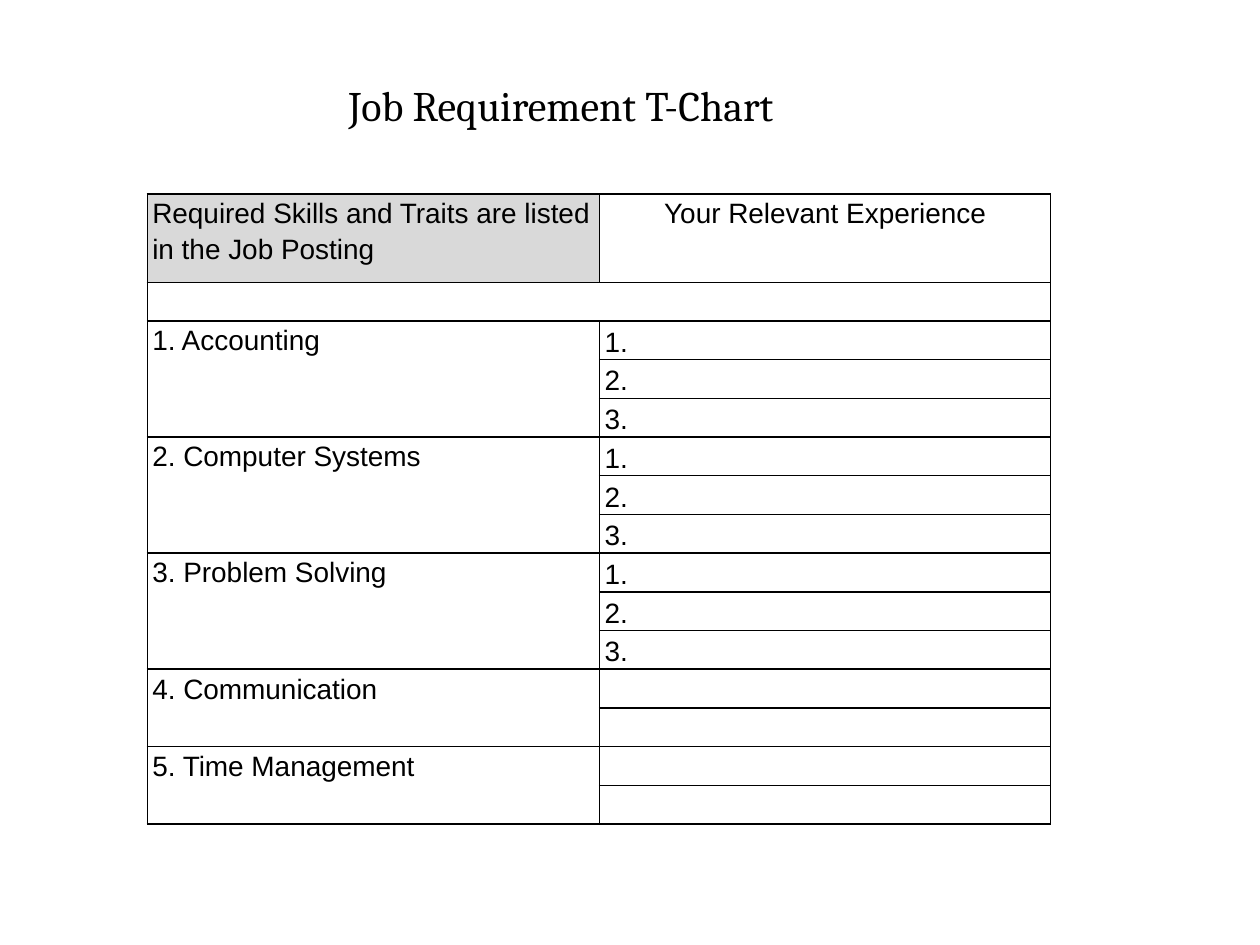
from lxml import etree
from pptx import Presentation
from pptx.dml.color import RGBColor
from pptx.enum.text import MSO_ANCHOR, MSO_AUTO_SIZE, PP_ALIGN
from pptx.oxml.ns import qn
from pptx.util import Cm, Pt

LEFT, CENTER = PP_ALIGN.LEFT, PP_ALIGN.CENTER
TOP, MIDDLE = MSO_ANCHOR.TOP, MSO_ANCHOR.MIDDLE
FIT_SHAPE = MSO_AUTO_SIZE.SHAPE_TO_FIT_TEXT

BLACK = RGBColor(0x00, 0x00, 0x00)
GRAY = RGBColor(0xD9, 0xD9, 0xD9)

COLUMN_WIDTHS = (9.12, 9.09)
HEADER_HEIGHT, ROW_HEIGHT = 1.78, 0.78

# Each skill with the labels of its experience rows
SKILLS = (
    ("1. Accounting", ("1.", "2.", "3.")),
    ("2. Computer Systems", ("1.", "2.", "3.")),
    ("3. Problem Solving", ("1.", "2.", "3.")),
    ("4. Communication", ("", "")),
    ("5. Time Management", ("", "")),
)


class ChartSlide:
    """The current slide and its text and table style."""

    title_font, title_size = "Cambria", Pt(24)
    body_font, body_size = "Arial", Pt(16)
    line_spacing = 1.15
    border_width = Pt(1)

    def __init__(self, slide):
        self.slide = slide

    def add_run(self, paragraph, text, font, size):
        run = paragraph.add_run()
        run.text = text
        run.font.name = font
        run.font.size = size
        run.font.color.rgb = BLACK

    def add_title(self, text, left, top, width, height):
        shape = self.slide.shapes.add_textbox(Cm(left), Cm(top), Cm(width), Cm(height))
        frame = shape.text_frame
        frame.word_wrap = True
        frame.auto_size = FIT_SHAPE
        self.add_run(frame.paragraphs[0], text, self.title_font, self.title_size)

    def add_table(self, left, top, column_widths, row_heights):
        frame = self.slide.shapes.add_table(
            len(row_heights), len(column_widths), Cm(left), Cm(top),
            Cm(sum(column_widths)), Cm(sum(row_heights)))
        table = frame.table
        table.first_row = table.horz_banding = False
        for column, width in zip(table.columns, column_widths):
            column.width = Cm(width)
        for row, height in zip(table.rows, row_heights):
            row.height = Cm(height)
        for cell in table.iter_cells():
            cell.margin_left = cell.margin_right = Cm(0.1)
            cell.margin_top = cell.margin_bottom = 0
            self.add_borders(cell)
            cell.fill.background()
            cell.text_frame.paragraphs[0].font.size = self.body_size
        return table

    def add_borders(self, cell):
        properties = cell._tc.get_or_add_tcPr()
        for side in ("lnL", "lnR", "lnT", "lnB"):
            line = etree.SubElement(properties, qn(f"a:{side}"), w=str(self.border_width))
            fill = etree.SubElement(line, qn("a:solidFill"))
            etree.SubElement(fill, qn("a:srgbClr"), val=str(BLACK))

    def write_cell(self, cell, text, alignment=LEFT, anchor=TOP):
        cell.vertical_anchor = anchor
        paragraph = cell.text_frame.paragraphs[0]
        paragraph.alignment = alignment
        paragraph.line_spacing = self.line_spacing
        self.add_run(paragraph, text, self.body_font, self.body_size)


def main():
    presentation = Presentation()
    presentation.slide_width, presentation.slide_height = Cm(25.4), Cm(19.05)
    slide = presentation.slides.add_slide(presentation.slide_layouts[6])
    chart = ChartSlide(slide)

    # Table grid: header, spacer row, then the rows of every skill
    row_count = 1 + sum(len(labels) for _, labels in SKILLS)
    row_heights = [HEADER_HEIGHT] + [ROW_HEIGHT] * row_count
    table = chart.add_table(2.97, 3.91, COLUMN_WIDTHS, row_heights)

    # Header and spacer
    skills_header, experience_header = table.cell(0, 0), table.cell(0, 1)
    chart.write_cell(skills_header, "Required Skills and Traits are listed in the Job Posting")
    skills_header.fill.solid()
    skills_header.fill.fore_color.rgb = GRAY
    chart.write_cell(experience_header, "Your Relevant Experience", CENTER)
    experience_header.text_frame.paragraphs[0].space_before = Pt(12)
    table.cell(1, 0).merge(table.cell(1, 1))

    # Skills on the left, experience rows on the right
    first_row = 2
    for skill, labels in SKILLS:
        skill_cell = table.cell(first_row, 0)
        skill_cell.merge(table.cell(first_row + len(labels) - 1, 0))
        chart.write_cell(skill_cell, skill)
        for row, label in enumerate(labels, first_row):
            if label:
                chart.write_cell(table.cell(row, 1), label, anchor=MIDDLE)
        first_row += len(labels)

    # Title
    chart.add_title("Job Requirement T-Chart", 6.78, 1.47, 10.59, 1.27)

    presentation.save("out.pptx")


if __name__ == "__main__":
    main()
